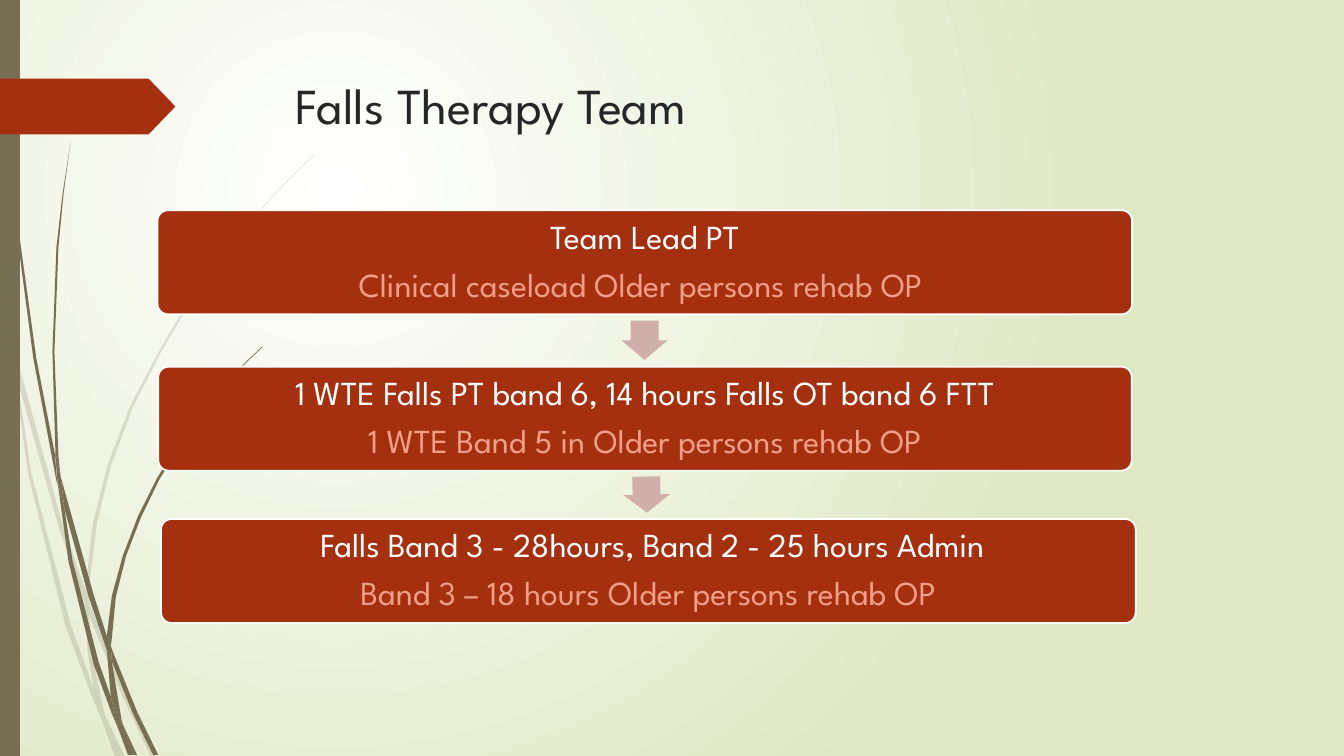
import pptx
import pptx.dml.color
import pptx.enum.shapes
import pptx.enum.text
import pptx.oxml
import pptx.oxml.ns
import pptx.util
from pptx.util import Cm

THEME = {
    "font": "League Spartan",
    "title_size": 36,
    "box_size": 24,
    "space_after": 8.4,
    "rust": "A53010",
    "olive": "766F54",
    "arrow": "CFAEAB",
    "white": "FFFFFF",
    "peach": "F39E87",
    "ink": "262626",
    "backdrop": ("FFFFFF", "DFE8C4"),
}

GRASS_UNIT = 2.54

PALE_GRASS = [
    [(.11, 3.5), (.09, 3.22), (0, 2.82), (0, 2.99), (.1, 3.44)],
    [(.58, 5.22), (.84, 5.99), (.85, 5.86), (.62, 5.2), (.14, 3.45), (.17, 3.76)],
    [(.92, 6.07), (.88, 5.96), (.88, 6.1), (1.23, 6.94), (1.5, 7.51), (1.55, 7.51),
     (1.27, 6.92)],
    [(1.19, 7.51), (1.24, 7.51), (1.05, 7.11)],
    [(.93, 6.83), (.7, 6.19), (.31, 4.69), (.17, 3.76), (.11, 3.5), (.28, 4.7),
     (.65, 6.21), (.92, 6.93), (1.01, 7.14), (.99, 7.07)],
    [(.84, 5.99), (.87, 6.46), (.93, 6.83), (.96, 6.92), (1.05, 7.11), (1.03, 7.06),
     (.91, 6.46), (.88, 6.1), (.88, 6.08)],
    [(.88, 5.84), (.96, 5.2), (1.1, 4.62), (1.32, 4.04), (1.6, 3.49), (1.92, 2.95),
     (2.29, 2.45), (2.68, 1.98), (2.9, 1.75), (3.12, 1.54), (3.12, 1.53),
     (2.89, 1.75), (2.68, 1.97), (2.28, 2.44), (1.9, 2.94), (1.58, 3.48),
     (1.29, 4.03), (1.07, 4.61), (.92, 5.2), (.85, 5.84), (.85, 5.86), (.88, 5.96)],
    [(1.01, 7.14), (1.14, 7.51), (1.19, 7.51)],
    [(.88, 6.08), (.88, 6.1), (.88, 5.96), (.85, 5.86), (.84, 5.99)],
    [(.96, 6.92), (.93, 6.83), (.99, 7.07), (1.01, 7.14), (1.19, 7.51), (1.05, 7.11)],
]

DARK_GRASS = [
    [(.07, 1.1), (.17, 2.33), (.33, 3.55), (.56, 4.77), (.57, 4.81), (.55, 4.57),
     (.55, 4.53), (.36, 3.55), (.19, 2.32), (.08, 1.09), (.05, .48), (.04, 0),
     (.03, 0), (.04, .48)],
    [(.88, 5.92), (1.06, 6.45), (1.06, 6.31), (.93, 5.9), (.6, 4.72), (.64, 5.05)],
    [(1.13, 6.49), (1.1, 6.41), (1.11, 6.56), (1.32, 7.08), (1.52, 7.49),
     (1.57, 7.49), (1.36, 7.06)],
    [(1.1, 6.91), (.98, 6.57), (.72, 5.56), (.64, 5.05), (.57, 4.77), (.68, 5.57),
     (.93, 6.59), (1.11, 7.08), (1.17, 7.22), (1.16, 7.17)],
    [(.6, 4.72), (.58, 4.53), (.54, 3.49), (.58, 2.45), (.63, 1.93), (.7, 1.41),
     (.62, 1.93), (.56, 2.45), (.52, 3.49), (.55, 4.49)],
    [(1.33, 7.49), (1.36, 7.49), (1.22, 7.19)],
    [(.57, 4.77), (.64, 5.05), (.6, 4.72), (.55, 4.49), (.55, 4.53)],
    [(1.11, 6.33), (1.15, 5.92), (1.25, 5.52), (1.4, 5.13), (1.58, 4.76),
     (1.8, 4.4), (2.05, 4.06), (2.31, 3.74), (2.45, 3.59), (2.61, 3.44), (2.6, 3.44),
     (2.45, 3.58), (2.31, 3.73), (2.04, 4.05), (1.78, 4.39), (1.56, 4.74),
     (1.37, 5.12), (1.22, 5.51), (1.11, 5.91), (1.06, 6.31), (1.1, 6.41)],
    [(1.17, 7.22), (1.27, 7.49), (1.31, 7.49)],
    [(1.06, 6.45), (1.1, 6.91), (1.16, 7.06), (1.22, 7.19), (1.21, 7.16),
     (1.11, 6.56), (1.09, 6.51)],
    [(1.06, 6.45), (1.09, 6.51), (1.11, 6.56), (1.1, 6.41), (1.06, 6.31)],
    [(1.16, 7.06), (1.1, 6.91), (1.16, 7.17), (1.17, 7.22), (1.3, 7.49),
     (1.33, 7.49), (1.22, 7.19)],
]

BOXES = [
    (3.97, 5.3, 24.56, "Team Lead PT", "Clinical caseload Older persons rehab OP "),
    (3.99, 9.24, 24.53, "1 WTE Falls PT band 6, 14 hours Falls OT band 6 FTT",
     "1 WTE Band 5 in Older persons rehab OP"),
    (4.06, 13.08, 24.56, " Falls Band 3 - 28hours, Band 2 - 25 hours Admin",
     "Band 3 – 18 hours Older persons rehab OP"),
]
BOX_HEIGHT = 2.62

ARROWS = [(15.66, 8.08, .99, 0), (15.71, 12.01, .91, -1.3)]
ARROW_WIDTH = 1.17


def rgb(value):
    """Turn a hex string into a colour."""
    return pptx.dml.color.RGBColor.from_string(value)


def set_all(target, values):
    """Set each attribute in a dict of format values."""
    for name, value in values.items():
        setattr(target, name, value)


def paint(sp, color, line=None, alpha=None):
    """Give a shape a flat fill, an optional outline and an optional opacity."""
    sp.shadow.inherit = False
    sp.fill.solid()
    sp.fill.fore_color.rgb = rgb(color)
    if line:
        sp.line.color.rgb = rgb(line)
        sp.line.width = pptx.util.Pt(1.25)
    else:
        sp.line.fill.background()
    if alpha:
        clr = sp.fill._xPr.find(".//" + pptx.oxml.ns.qn("a:srgbClr"))
        clr.append(pptx.oxml.parse_xml(
            f'<a:alpha {pptx.oxml.ns.nsdecls("a")} val="{alpha * 1000}"/>'))


def add_preset(s, kind, box, color, adjustments=(), line=None):
    """Add a preset shape at a box given in centimetres."""
    sp = s.shapes.add_shape(kind, *map(Cm, box))
    for i, value in enumerate(adjustments):
        sp.adjustments[i] = value
    paint(sp, color, line)
    return sp


def add_grass(s, blades, alpha=None):
    """Draw a group of grass blades from their outlines."""
    group = s.shapes.add_group_shape()
    for blade in blades:
        outline = [(Cm(x * GRASS_UNIT), Cm(y * GRASS_UNIT)) for x, y in blade]
        builder = group.shapes.build_freeform(*outline[0], scale=1.0)
        builder.add_line_segments(outline[1:], close=True)
        paint(builder.convert_to_shape(), THEME["olive"], alpha=alpha)


def add_backdrop(s):
    """Fill the background with a circular gradient."""
    fill = s.background.fill
    fill.gradient()
    for stop, color, position in zip(fill.gradient_stops, THEME["backdrop"], (0, 1)):
        stop.color.rgb = rgb(color)
        stop.position = position
    grad = s.background._cSld.find(".//" + pptx.oxml.ns.qn("a:gradFill"))
    grad.replace(grad.find(pptx.oxml.ns.qn("a:lin")), pptx.oxml.parse_xml(
        f'<a:path {pptx.oxml.ns.nsdecls("a")} path="circle">'
        '<a:fillToRect l="50000" t="50000" r="100000" b="100000"/></a:path>'))


def write(p, text, size, color):
    """Write one formatted run into a paragraph."""
    r = p.add_run()
    r.text = text
    set_all(r.font, {"name": THEME["font"], "size": pptx.util.Pt(size)})
    r.font.color.rgb = rgb(color)


def add_title(s, text):
    """Place and format the title placeholder."""
    sp = s.shapes.title
    set_all(sp, {"left": Cm(7.2), "top": Cm(1.73),
                 "width": Cm(24.77), "height": Cm(3.56)})
    tf = sp.text_frame
    set_all(tf, {"vertical_anchor": pptx.enum.text.MSO_ANCHOR.TOP, "word_wrap": True,
                 "auto_size": pptx.enum.text.MSO_AUTO_SIZE.NONE})
    p = tf.paragraphs[0]
    p.alignment = pptx.enum.text.PP_ALIGN.LEFT
    write(p, text, THEME["title_size"], THEME["ink"])


def add_box(s, left, top, width, heading, detail):
    """Add a rounded team box with a heading and a detail line."""
    sp = add_preset(s, pptx.enum.shapes.MSO_SHAPE.ROUNDED_RECTANGLE,
                    (left, top, width, BOX_HEIGHT), THEME["rust"], (.1,), THEME["white"])
    tf = sp.text_frame
    set_all(tf, {"word_wrap": True, "vertical_anchor": pptx.enum.text.MSO_ANCHOR.MIDDLE})
    set_all(tf, {f"margin_{side}": Cm(.25) for side in ("left", "top", "right", "bottom")})
    lines = ((tf.paragraphs[0], heading, "white"), (tf.add_paragraph(), detail, "peach"))
    for p, text, color in lines:
        set_all(p, {"alignment": pptx.enum.text.PP_ALIGN.CENTER, "line_spacing": .9,
                    "space_after": pptx.util.Pt(THEME["space_after"])})
        write(p, text, THEME["box_size"], THEME[color])


def main():
    """Build the slide and save it."""
    shapes = pptx.enum.shapes.MSO_SHAPE
    prs = pptx.Presentation()
    set_all(prs, {"slide_width": Cm(33.87), "slide_height": Cm(19.05)})
    s = prs.slides.add_slide(prs.slide_layouts[5])
    add_backdrop(s)
    add_grass(s, PALE_GRASS, alpha=20)
    add_grass(s, DARK_GRASS)
    add_preset(s, shapes.RECTANGLE, (0, 0, .5, 19.05), THEME["olive"])
    add_preset(s, shapes.PENTAGON, (0, 1.98, 4.42, 1.41), THEME["rust"], (.48,))
    add_title(s, "Falls Therapy Team")
    for box in BOXES:
        add_box(s, *box)
    for left, top, height, rotation in ARROWS:
        sp = add_preset(s, shapes.DOWN_ARROW, (left, top, ARROW_WIDTH, height),
                        THEME["arrow"], (.6, .5))
        sp.rotation = rotation
    prs.save("out.pptx")


if __name__ == "__main__":
    main()
